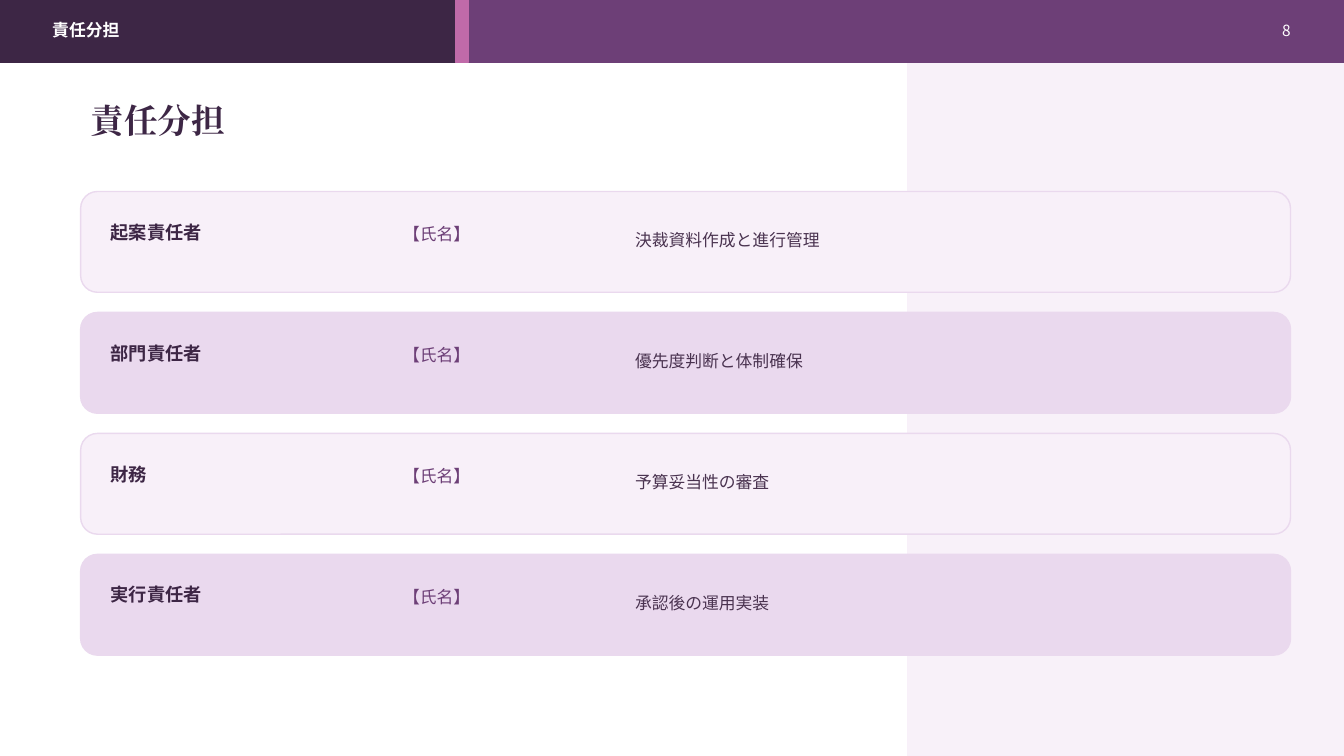
"""Build the slide on the division of responsibilities."""
import pptx
import pptx.dml.color
import pptx.enum.shapes
import pptx.enum.text
import pptx.oxml.ns
import pptx.util
from lxml import etree

TITLE = "責任分担"
PAGE = "8"
ROLES = [
    ("起案責任者", "【氏名】", "決裁資料作成と進行管理"),
    ("部門責任者", "【氏名】", "優先度判断と体制確保"),
    ("財務", "【氏名】", "予算妥当性の審査"),
    ("実行責任者", "【氏名】", "承認後の運用実装"),
]

THEME = {
    "dark": "3D2645", "main": "6D3F77", "pink": "C06AA9", "pale": "F8F0F9",
    "lilac": "EAD9EE", "body": "4A3350", "white": "FFFFFF",
    "sans": "Noto Sans CJK JP", "serif": "Cambria",
    "title": 24, "role": 13, "text": 12, "page": 11,
}

WIDTH, HEIGHT = 13.33, 7.5
BAR = 0.62
TOP, STEP = 1.9, 1.2
CARD = (0.8, 12, 1)
FIELDS = [
    (1, 0.28, 2.7, 0.24, "role", "dark", True),
    (3.9, 0.3, 2.1, 0.24, "text", "main", False),
    (6.2, 0.25, 6.2, 0.45, "text", "body", False),
]

RECT = pptx.enum.shapes.MSO_SHAPE.RECTANGLE
ROUND = pptx.enum.shapes.MSO_SHAPE.ROUNDED_RECTANGLE
RIGHT = pptx.enum.text.PP_ALIGN.RIGHT


def color(name):
    return pptx.dml.color.RGBColor.from_string(THEME[name])


def place(box):
    return [pptx.util.Inches(side) for side in box]


def add_box(slide, box, fill, line=None, kind=RECT):
    shape = slide.shapes.add_shape(kind, *place(box))
    shape.shadow.inherit = False
    shape.fill.solid()
    shape.fill.fore_color.rgb = color(fill)
    shape.line.color.rgb = color(line or fill)
    shape.line.width = pptx.util.Pt(1)
    return shape


def add_text(slide, box, text, size, ink, bold=False, face="sans", align=None):
    frame = slide.shapes.add_textbox(*place(box)).text_frame
    frame.word_wrap = True
    frame.vertical_anchor = pptx.enum.text.MSO_ANCHOR.MIDDLE
    frame.text = text
    para = frame.paragraphs[0]
    para.alignment = align
    run = para.runs[0]
    run.font.name = THEME[face]
    run.font.size = pptx.util.Pt(THEME[size])
    run.font.bold = bold
    run.font.color.rgb = color(ink)
    east = etree.SubElement(run.font._element, pptx.oxml.ns.qn("a:ea"))
    east.set("typeface", THEME[face])


def add_frame(slide):
    panel = add_box(slide, (9, 0.55, 4.33, 6.95), "pale")
    tint = panel.element.spPr.find(
        pptx.oxml.ns.qn("a:solidFill")).find(pptx.oxml.ns.qn("a:srgbClr"))
    etree.SubElement(tint, pptx.oxml.ns.qn("a:alpha")).set("val", "88000")
    for left, width, fill in [(0, WIDTH, "main"), (0, 4.6, "dark"), (4.52, 0.12, "pink")]:
        add_box(slide, (left, 0, width, BAR), fill)
    add_text(slide, (0.42, 0.17, 8.8, 0.26), TITLE, "text", "white", True)
    add_text(slide, (12.15, 0.17, 0.75, 0.26), PAGE, "page", "white", align=RIGHT)
    add_text(slide, (0.8, 0.95, 11.4, 0.48), TITLE, "title", "dark", True, "serif")


def add_roles(slide):
    left, width, height = CARD
    for row, texts in enumerate(ROLES):
        top = TOP + row * STEP
        fill = ("pale", "lilac")[row % 2]
        add_box(slide, (left, top, width, height), fill, "lilac", ROUND)
        for text, (x, drop, wide, tall, size, ink, bold) in zip(texts, FIELDS):
            add_text(slide, (x, top + drop, wide, tall), text, size, ink, bold)


def main():
    deck = pptx.Presentation()
    deck.slide_width, deck.slide_height = place((WIDTH, HEIGHT))
    slide = deck.slides.add_slide(deck.slide_layouts[6])
    add_frame(slide)
    add_roles(slide)
    deck.save("out.pptx")


if __name__ == "__main__":
    main()
